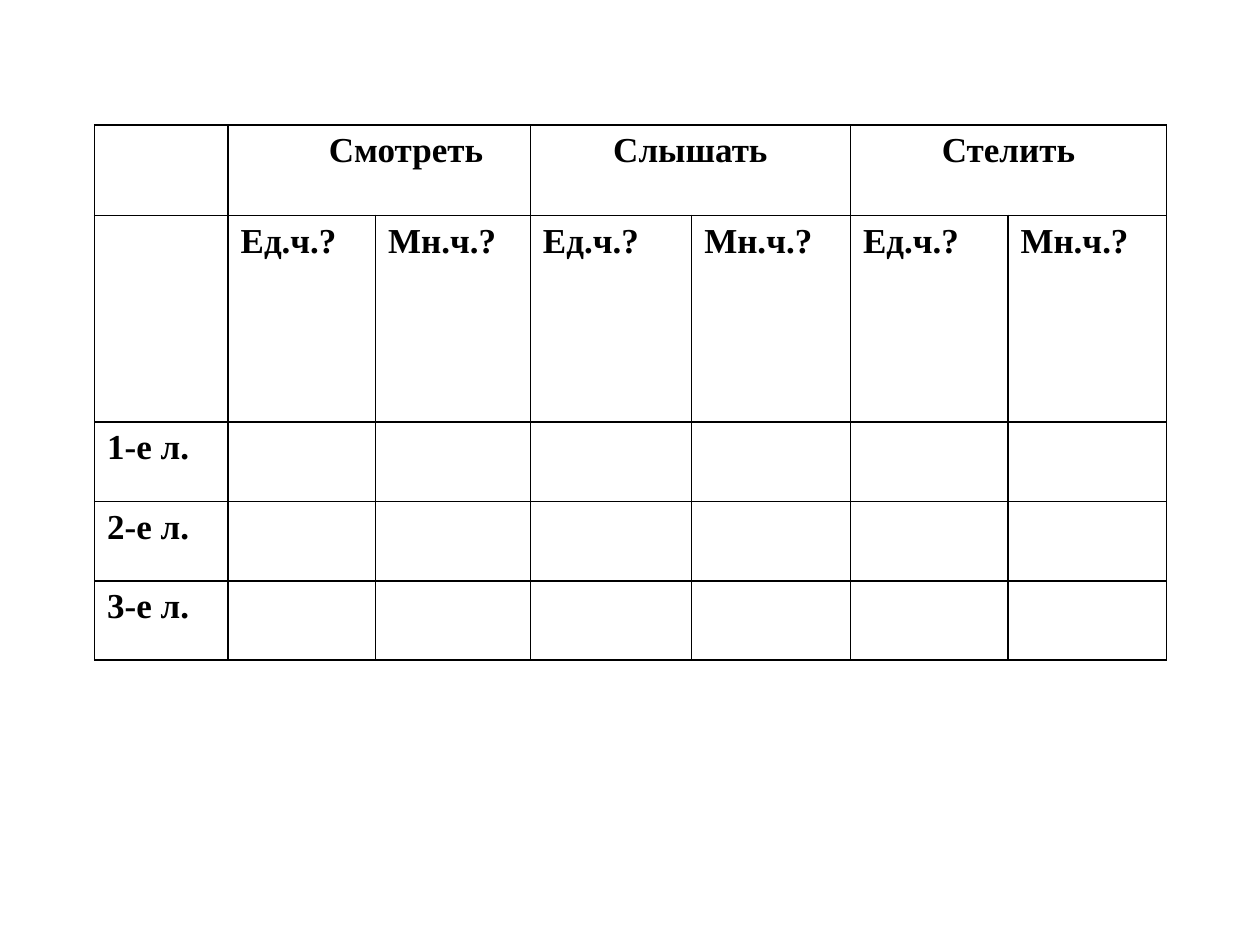
from typing import NamedTuple

from lxml.etree import SubElement
from pptx import Presentation
from pptx.dml.color import RGBColor as RGB
from pptx.enum.text import PP_ALIGN as Align
from pptx.oxml.ns import qn
from pptx.table import Table, _Cell as Cell
from pptx.util import Inches, Pt

FONT = "Times New Roman"
COLORS = {"ink": "000000"}
COLS = [1.06, 1.17, 1.23, 1.28, 1.26, 1.25, 1.26]
ROWS = [0.72, 1.64, 0.63, 0.63, 0.63]
NUMBERS = ["Ед.ч.?", "Мн.ч.?"]
PERSONS = ["1-е л.", "2-е л.", "3-е л."]


class Verb(NamedTuple):
    text: str
    align: Align = Align.CENTER
    inset: float = 0.1


VERBS = [Verb("Смотреть", Align.LEFT, 0.8), Verb("Слышать"), Verb("Стелить")]


def frame(cell: Cell) -> None:
    """Clear the cell's fill and rule its four sides."""
    props = cell._tc.get_or_add_tcPr()
    for side in ("lnL", "lnR", "lnT", "lnB"):
        line = SubElement(props, qn(f"a:{side}"), w=str(Pt(1)))
        fill = SubElement(line, qn("a:solidFill"))
        SubElement(fill, qn("a:srgbClr"), val=COLORS["ink"])
    cell.fill.background()


def write(cell: Cell, text: str, align: Align = Align.LEFT) -> None:
    cell.text_frame.text = text
    para = cell.text_frame.paragraphs[0]
    para.alignment = align
    font = para.runs[0].font
    font.name, font.size, font.bold = FONT, Pt(20), True
    font.color.rgb = RGB.from_string(COLORS["ink"])


def fill_table(table: Table) -> None:
    for i, verb in enumerate(VERBS):
        col = 1 + i * len(NUMBERS)
        head = table.cell(0, col)
        head.merge(table.cell(0, col + 1))
        head.margin_left = Inches(verb.inset)
        write(head, verb.text, verb.align)
        for j, number in enumerate(NUMBERS):
            write(table.cell(1, col + j), number)
    for row, person in enumerate(PERSONS, 2):
        write(table.cell(row, 0), person)


def main() -> None:
    prs = Presentation()
    prs.slide_width, prs.slide_height = Inches(10), Inches(7.5)
    slide = prs.slides.add_slide(prs.slide_layouts[6])
    table = slide.shapes.add_table(
        len(ROWS), len(COLS), Inches(0.75), Inches(0.99),
        Inches(sum(COLS)), Inches(sum(ROWS))).table
    table.first_row = table.horz_banding = False
    for col, width in zip(table.columns, COLS):
        col.width = Inches(width)
    for row, height in zip(table.rows, ROWS):
        row.height = Inches(height)
    for cell in table.iter_cells():
        frame(cell)
    fill_table(table)
    prs.save("out.pptx")


if __name__ == "__main__":
    main()
